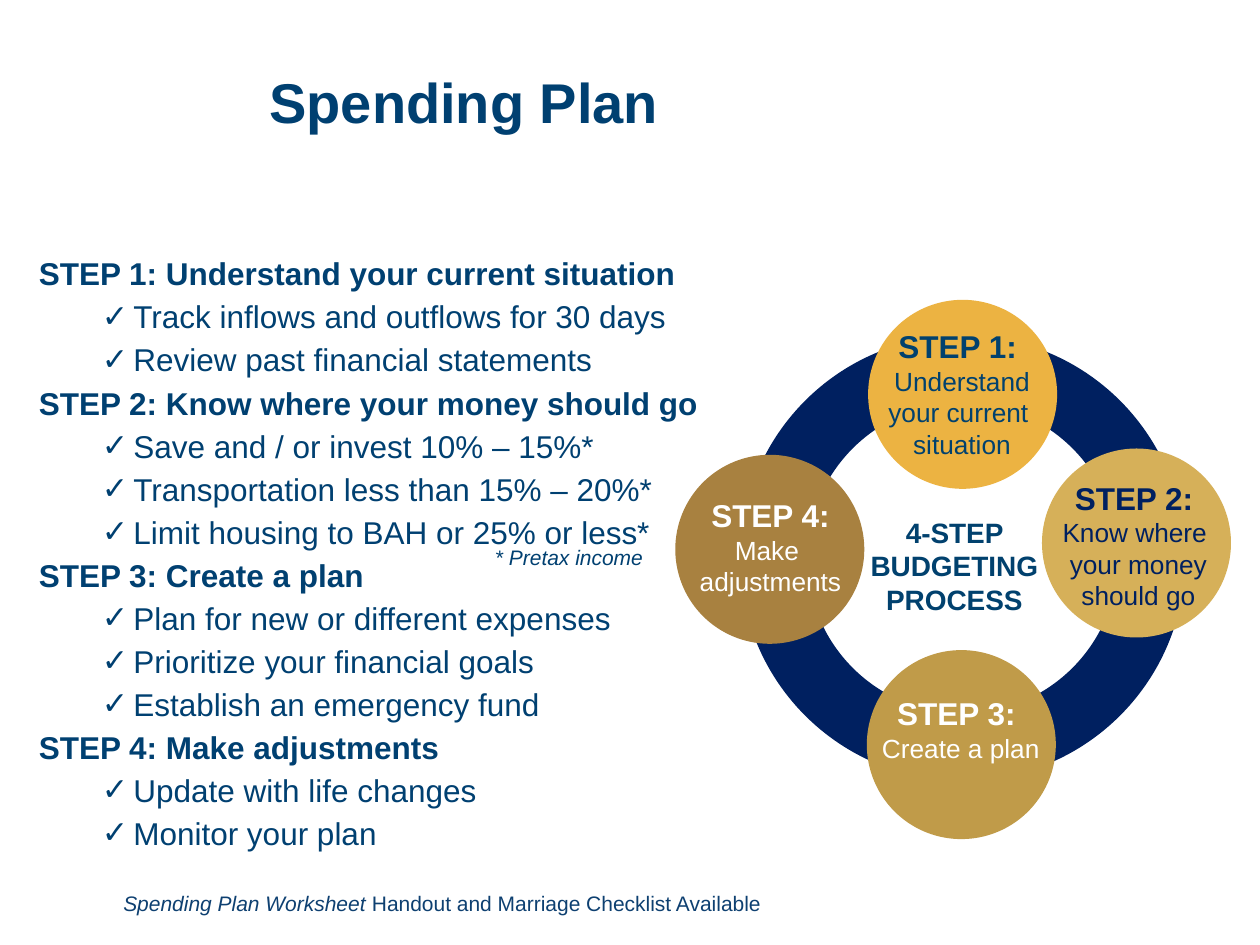
from lxml.etree import SubElement
from pptx import Presentation
from pptx.dml.color import RGBColor
from pptx.enum.shapes import MSO_SHAPE
from pptx.enum.text import MSO_ANCHOR, PP_ALIGN
from pptx.oxml.ns import qn
from pptx.util import Inches, Pt

COLORS = {
    "text": "004071", "label": "01416E", "footer": "0E4071", "navy": "002060",
    "white": "FFFFFF", "amber": "ECB342", "sand": "D6B059",
    "gold": "C09B49", "bronze": "A88140",
}
FONT = "Arial"
TITLE = "Spending Plan"
STEPS = [
    ("STEP 1: Understand your current situation",
     ["Track inflows and outflows for 30 days",
      "Review past financial statements"]),
    ("STEP 2: Know where your money should go",
     ["Save and / or invest 10% – 15%*",
      "Transportation less than 15% – 20%*",
      "Limit housing to BAH or 25% or less*"]),
    ("STEP 3: Create a plan",
     ["Plan for new or different expenses",
      "Prioritize your financial goals",
      "Establish an emergency fund"]),
    ("STEP 4: Make adjustments",
     ["Update with life changes",
      "Monitor your plan"]),
]
NOTE = "* Pretax income"
HUB = ["4-STEP BUDGETING", "PROCESS"]
# circle left, top, fill; label left, top, height, colour, heading, lines
CYCLE = [
    (6.89, 2.38, "amber", 6.91, 2.55, 1.16, "label", "STEP 1: ",
     ["Understand your current ", "situation"]),
    (8.27, 3.56, "sand", 8.31, 3.75, 1.2, "navy", "STEP 2: ",
     ["Know where ", "your money", "should go"]),
    (6.88, 5.16, "gold", 6.9, 5.46, 0.92, "white", "STEP 3: ",
     ["Create a plan"]),
    (5.36, 3.61, "bronze", 5.39, 3.89, 0.92, "white", "STEP 4:",
     ["Make ", "adjustments"]),
]
RING, RING_SIZE, RING_WIDTH = (6.14, 2.93), 3, 38.5
CIRCLE_SIZE, LABEL_WIDTH = 1.5, 1.45

prs = Presentation()
prs.slide_width, prs.slide_height = Inches(10), Inches(7.5)
s = prs.slides.add_slide(prs.slide_layouts[6])


def rgb(name):
    return RGBColor.from_string(COLORS[name])


def add_text(left, top, width, height):
    tf = s.shapes.add_textbox(*map(Inches, (left, top, width, height))).text_frame
    tf.word_wrap = True
    return tf


def add_paragraph(tf, align=None):
    """Return the empty first paragraph, or a new one."""
    p = tf.paragraphs[0]
    if p.runs:
        p = tf.add_paragraph()
    if align is not None:
        p.alignment = align
    return p


def add_run(p, text, size, color, bold=False, italic=False):
    r = p.add_run()
    r.text = text
    f = r.font
    f.name, f.size, f.bold, f.italic = FONT, Pt(size), bold, italic
    f.color.rgb = rgb(color)


def set_indent(p, left, first=0, bullet=None):
    pPr = p._p.get_or_add_pPr()
    pPr.set("marL", str(Inches(left)))
    pPr.set("indent", str(Inches(first)))
    if bullet:
        SubElement(pPr, qn("a:buFont")).set("typeface", FONT)
        SubElement(pPr, qn("a:buChar")).set("char", bullet)


def add_circle(left, top, size):
    sp = s.shapes.add_shape(MSO_SHAPE.OVAL, *map(Inches, (left, top, size, size)))
    sp.shadow.inherit = False
    return sp


# Title
tf = add_text(2.04, 0.11, 7.26, 1.45)
tf.vertical_anchor = MSO_ANCHOR.MIDDLE
p = add_paragraph(tf)
p.line_spacing = 0.9
add_run(p, TITLE, 32, "text", bold=True)

# Step list
tf = add_text(0.2, 1.97, 6.22, 4.7)
for heading, items in STEPS:
    for i, text in enumerate([heading, *items]):
        p = add_paragraph(tf)
        if i:
            p.level = 1
            set_indent(p, 0.76, -0.25, "✓")
        else:
            set_indent(p, 0.01)
        if p._p is not tf.paragraphs[0]._p:
            p.space_before = Pt(3)
        add_run(p, text, 18, "text", bold=i == 0)

p = add_paragraph(add_text(3.32, 4.27, 2.13, 0.33))
p.level = 1
set_indent(p, 0.51)
add_run(p, NOTE, 12, "text", italic=True)

# Cycle diagram
ring = add_circle(*RING, RING_SIZE)
ring.fill.background()
ring.line.color.rgb = rgb("navy")
ring.line.width = Pt(RING_WIDTH)
for left, top, fill, *_ in CYCLE:
    sp = add_circle(left, top, CIRCLE_SIZE)
    sp.fill.solid()
    sp.fill.fore_color.rgb = rgb(fill)
    sp.line.fill.background()

tf = add_text(6.66, 4.04, 1.83, 0.91)
for text in HUB:
    add_run(add_paragraph(tf, PP_ALIGN.CENTER), text, 16, "label", bold=True)

for _, _, _, left, top, height, color, heading, lines in CYCLE:
    tf = add_text(left, top, LABEL_WIDTH, height)
    add_run(add_paragraph(tf, PP_ALIGN.CENTER), heading, 18, color, bold=True)
    for text in lines:
        add_run(add_paragraph(tf, PP_ALIGN.CENTER), text, 15, color)

# Footer
p = add_paragraph(add_text(0.88, 7.02, 6.49, 0.3))
add_run(p, "Spending Plan Worksheet", 12, "footer", italic=True)
add_run(p, " Handout and Marriage Checklist Available", 12, "footer")

prs.save("out.pptx")
